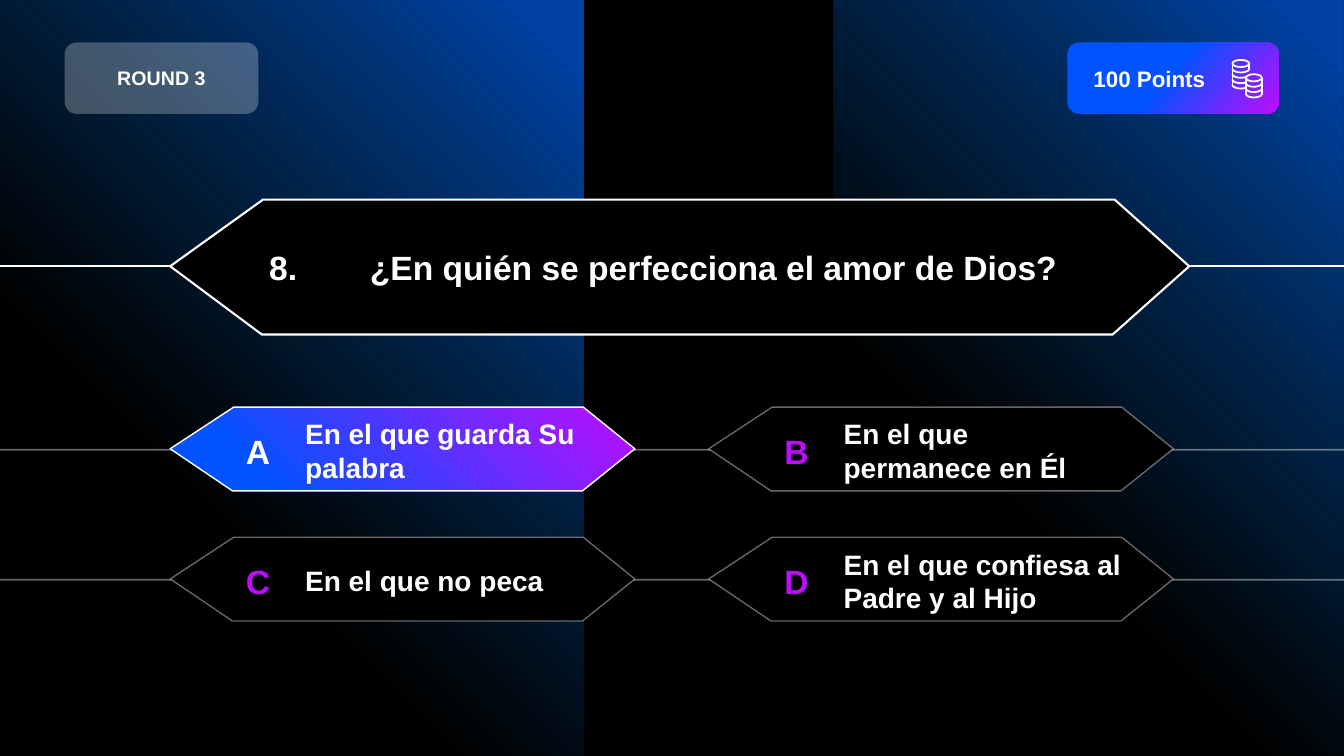
import math
from dataclasses import dataclass

import pptx
import pptx.dml.color
import pptx.enum.shapes
import pptx.enum.text
import pptx.oxml
import pptx.oxml.ns
import pptx.util
from lxml import etree

Cm, Pt = pptx.util.Cm, pptx.util.Pt
RGB = pptx.dml.color.RGBColor.from_string
qn = pptx.oxml.ns.qn
SHAPE = pptx.enum.shapes.MSO_SHAPE
ALIGN = pptx.enum.text.PP_ALIGN

QUESTION = "8.\t¿En quién se perfecciona el amor de Dios?"
ROUND = "ROUND 3"
POINTS = "100 Points"
# letter, answer, text width in cm, highlighted
ANSWERS = [
    ("A", "En el que guarda Su palabra", 7.37, True),
    ("B", "En el que permanece en Él", 7.24, False),
    ("C", "En el que no peca", 8.41, False),
    ("D", "En el que confiesa al Padre y al Hijo", 7.52, False),
]


@dataclass(frozen=True)
class Theme:
    font: str = "Arial"
    black: str = "000000"
    white: str = "FFFFFF"
    blue: str = "0053FF"
    purple: str = "BD0DFF"
    glow: str = "0066FF"
    deep: str = "0070C0"
    large: int = 24
    answer: int = 20
    points: int = 16
    round: int = 14
    dim: int = 40
    glass: int = 26


T = Theme()
CORNER = ('<a:path path="circle"><a:fillToRect l="100000" b="100000"/></a:path>'
          '<a:tileRect t="-100000" r="-100000"/>')
DIAGONAL = '<a:lin ang="2400000" scaled="0"/>'
PANEL_STOPS = [(0, T.glow, 63), (6, T.glow, 63), (66, T.deep, 0), (100, T.black, 0)]
ANSWER_STOPS = [(0, T.purple, 100), (82, T.blue, 100), (100, T.blue, 100)]
POINTS_STOPS = [(0, T.blue, 100), (47, T.blue, 100), (99, T.purple, 100), (100, T.purple, 100)]

# Layout in cm
WIDTH, HEIGHT = 33.87, 19.05
PANELS = [(0, 14.71, True), (21.01, 12.86, False)]  # left, width, flipped
LEFTS, TOPS = (4.29, 17.86), (10.26, 13.54)
QUESTION_AT = (4.29, 5.03)
QUESTION_OUTLINE = [(0, 1.68), (2.34, 0), (23.8, 0), (25.68, 1.68), (23.75, 3.4), (2.31, 3.4)]
ANSWER_OUTLINE = [(0, 1.05), (1.6, 0), (10.41, 0), (11.71, 1.05), (10.39, 2.11), (1.57, 2.11)]
BADGE_TOP, BADGE_HEIGHT = 1.07, 1.8
COIN_RY, COIN_STEP = 0.09, 0.135


def set_alpha(parent, percent):
    color = next(parent.iter(qn("a:srgbClr")))
    etree.SubElement(color, qn("a:alpha")).set("val", str(percent * 1000))


def fill_solid(sp, color):
    sp.fill.solid()
    sp.fill.fore_color.rgb = RGB(color)


def fill_gradient(sp, stops, direction):
    """Fill with (position, colour, opacity) stops, all in percent."""
    sp.fill.background()
    gs = "".join(f'<a:gs pos="{pos * 1000}"><a:srgbClr val="{color}">'
                 f'<a:alpha val="{alpha * 1000}"/></a:srgbClr></a:gs>'
                 for pos, color, alpha in stops)
    xml = (f'<a:gradFill {pptx.oxml.ns.nsdecls("a")} rotWithShape="1">'
           f'<a:gsLst>{gs}</a:gsLst>{direction}</a:gradFill>')
    spPr = sp.element.spPr
    spPr.replace(spPr.find(qn("a:noFill")), pptx.oxml.parse_xml(xml))


def style_line(sp, width, alpha=100):
    sp.line.color.rgb = RGB(T.white)
    sp.line.width = Pt(width)
    if alpha < 100:
        set_alpha(sp.element.spPr.find(qn("a:ln")), alpha)


def add_preset(s, kind, left, top, width, height):
    sp = s.shapes.add_shape(kind, Cm(left), Cm(top), Cm(width), Cm(height))
    sp.shadow.inherit = False
    sp.line.fill.background()
    return sp


def add_outline(s, contours, closed):
    """Draw one freeform from lists of points in cm."""
    contours = [[(Cm(x), Cm(y)) for x, y in points] for points in contours]
    builder = s.shapes.build_freeform(*contours[0][0])
    for i, points in enumerate(contours):
        if i:
            builder.move_to(*points[0])
        builder.add_line_segments(points[1:], close=closed)
    sp = builder.convert_to_shape()
    sp.shadow.inherit = False
    return sp


def add_hexagon(s, left, top, outline):
    return add_outline(s, [[(left + x, top + y) for x, y in outline]], True)


def add_rule(s, y, width, alpha=100):
    c = s.shapes.add_connector(pptx.enum.shapes.MSO_CONNECTOR.STRAIGHT,
                               0, Cm(y), Cm(WIDTH), Cm(y))
    style_line(c, width, alpha)
    etree.SubElement(c.element.spPr, qn("a:effectLst"))


def set_text(sp, text, size, color=T.white, align=ALIGN.LEFT):
    tf = sp.text_frame
    tf.word_wrap = True
    tf.auto_size = pptx.enum.text.MSO_AUTO_SIZE.NONE
    tf.vertical_anchor = pptx.enum.text.MSO_ANCHOR.MIDDLE
    p = tf.paragraphs[0]
    p.text = text
    p.alignment = align
    p.font.name, p.font.size, p.font.bold = T.font, Pt(size), True
    p.font.color.rgb = RGB(color)
    return p


def add_text(s, left, top, width, *text_args):
    sp = s.shapes.add_textbox(Cm(left), Cm(top), Cm(width), Cm(2.03))
    set_text(sp, *text_args)


def add_answer(s, left, top, letter, answer, width, highlighted):
    sp = add_hexagon(s, left, top, ANSWER_OUTLINE)
    if highlighted:
        fill_gradient(sp, ANSWER_STOPS, CORNER)
    else:
        fill_solid(sp, T.black)
    style_line(sp, 1, 100 if highlighted else T.dim)
    letter_color = T.white if highlighted else T.purple
    add_text(s, left + 1.55, top + 0.08, 1.32, letter, T.large, letter_color, ALIGN.CENTER)
    add_text(s, left + 3.15, top + 0.08, width, answer, T.answer)


def coin_stack(x, y, rx, coins, hidden_from):
    """Contours of a stack; coins from hidden_from on are covered at the right."""
    def arc(cy, start, end):
        angles = [math.radians(start + (end - start) * i / 16) for i in range(17)]
        return [(x + rx * math.cos(a), cy + COIN_RY * math.sin(a)) for a in angles]

    bands = [arc(y + k * COIN_STEP, 0 if k < hidden_from else 52, 180)
             for k in range(1, coins + 1)]
    right_end = y + min(coins, hidden_from - 1) * COIN_STEP
    sides = [[(x - rx, y), (x - rx, y + coins * COIN_STEP)], [(x + rx, y), (x + rx, right_end)]]
    return [arc(y, 0, 360)] + bands + sides


def main():
    prs = pptx.Presentation()
    prs.slide_width, prs.slide_height = Cm(WIDTH), Cm(HEIGHT)
    s = prs.slides.add_slide(prs.slide_layouts[5])
    fill_solid(s.background, T.black)

    for left, width, flipped in PANELS:
        sp = add_preset(s, SHAPE.RECTANGLE, left, 0, width, HEIGHT)
        fill_gradient(sp, PANEL_STOPS, CORNER)
        if flipped:
            sp.element.spPr.find(qn("a:xfrm")).set("flipH", "1")

    add_rule(s, 6.71, 1.5)
    sp = add_hexagon(s, *QUESTION_AT, QUESTION_OUTLINE)
    fill_solid(sp, T.black)
    style_line(sp, 1.5)

    for row, top in enumerate(TOPS):
        add_rule(s, top + 1.07, 1.25, T.dim)
        for left, answer in zip(LEFTS, ANSWERS[2 * row:2 * row + 2]):
            add_answer(s, left, top, *answer)

    points = add_preset(s, SHAPE.ROUNDED_RECTANGLE, 26.9, BADGE_TOP, 5.33, BADGE_HEIGHT)
    fill_gradient(points, POINTS_STOPS, DIAGONAL)
    set_text(points, POINTS, T.points)
    points.text_frame.margin_left = Cm(0.57)
    coins = add_outline(s, coin_stack(31.27, 1.6, 0.21, 4, 2)
                        + coin_stack(31.6, 1.96, 0.2, 3, 4), False)
    coins.fill.background()
    style_line(coins, 1.25)

    badge = add_preset(s, SHAPE.ROUNDED_RECTANGLE, 1.63, BADGE_TOP, 4.88, BADGE_HEIGHT)
    fill_solid(badge, T.white)
    set_alpha(badge.element.spPr, T.glass)
    set_text(badge, ROUND, T.round, T.white, ALIGN.CENTER)

    title = s.shapes.title
    title.left, title.top, title.width, title.height = Cm(6.53), Cm(5.05), Cm(21.39), Cm(3.38)
    p = set_text(title, QUESTION, T.large)
    tabs = pptx.oxml.parse_xml(f'<a:tabLst {pptx.oxml.ns.nsdecls("a")}>'
                               f'<a:tab pos="{Cm(2.54)}" algn="l"/></a:tabLst>')
    next(title.element.iter(qn("a:defRPr"))).addprevious(tabs)
    title.element.getparent().append(title.element)  # bring to front

    prs.save("out.pptx")


if __name__ == "__main__":
    main()
